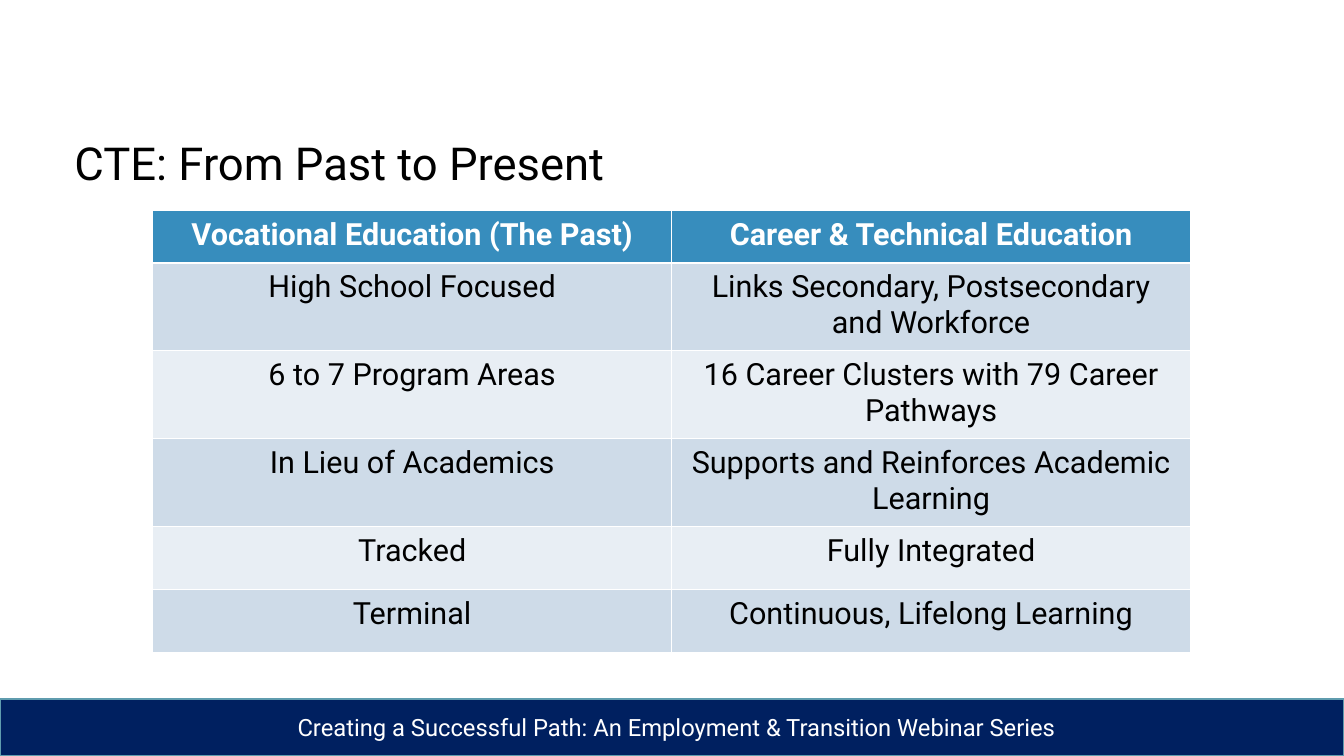
from dataclasses import dataclass

from lxml.etree import SubElement
from pptx import Presentation
from pptx.dml.color import RGBColor
from pptx.enum.shapes import MSO_SHAPE
from pptx.enum.text import MSO_ANCHOR, PP_ALIGN
from pptx.oxml.ns import qn
from pptx.util import Pt

TITLE = "CTE: From Past to Present"
FOOTER = "Creating a Successful Path: An Employment & Transition Webinar Series"
ROWS = [
    ("Vocational Education (The Past)", "Career & Technical Education"),
    ("High School Focused", "Links Secondary, Postsecondary and Workforce"),
    ("6 to 7 Program Areas", "16 Career Clusters with 79 Career Pathways"),
    ("In Lieu of Academics", "Supports and Reinforces Academic Learning"),
    ("Tracked", "Fully Integrated"),
    ("Terminal", "Continuous, Lifelong Learning"),
]

PX = 9144  # EMU per px, 100 px to the inch
SLIDE_W, SLIDE_H = 2199, 1237
BAR_BOX = (0, 1144, SLIDE_W, 92)
FOOTER_BOX = (477, 1162, 1280, 57)
TITLE_BOX = (112, 216, 1975, 99)
TABLE_LEFT, TABLE_TOP, COL_W = 250, 345, 849
ROW_HEIGHTS = (85, 144, 144, 144, 103, 103)
CELL_PAD_X, CELL_PAD_Y = 22, 11


@dataclass(frozen=True)
class Theme:
    font: str = "Roboto"
    title_size: float = 53.5
    table_size: int = 36
    footer_size: int = 28
    ink: str = "000000"
    white: str = "FFFFFF"
    navy: str = "002060"
    bar_line: str = "5F9CAE"
    header: str = "378DBD"
    bands: tuple = ("CEDBE8", "E8EEF4")


THEME = Theme()


def emu(*lengths):
    return [length * PX for length in lengths]


def write(tf, text, size, color, bold=False, align=PP_ALIGN.LEFT):
    tf.text = text
    tf.word_wrap = True
    p = tf.paragraphs[0]
    p.alignment = align
    font = p.runs[0].font
    font.name, font.size, font.bold = THEME.font, Pt(size), bold
    font.color.rgb = RGBColor.from_string(color)


def add_rect(s, box):
    sp = s.shapes.add_shape(MSO_SHAPE.RECTANGLE, *emu(*box))
    sp.shadow.inherit = False
    sp.fill.solid()
    sp.fill.fore_color.rgb = RGBColor.from_string(THEME.navy)
    return sp


def add_borders(cell, bottom, top):
    """White cell edges; bottom and top are widths in points."""
    tc_pr = cell._tc.get_or_add_tcPr()
    for side, width in (("L", 1), ("R", 1), ("T", top), ("B", bottom)):
        ln = SubElement(tc_pr, qn(f"a:ln{side}"), w=str(Pt(width)))
        fill = SubElement(ln, qn("a:solidFill"))
        SubElement(fill, qn("a:srgbClr"), val=THEME.white)


def add_footer(s):
    bar = add_rect(s, BAR_BOX)
    bar.line.color.rgb = RGBColor.from_string(THEME.bar_line)
    bar.line.width = Pt(2)
    label = add_rect(s, FOOTER_BOX)
    label.line.fill.background()
    label.text_frame.vertical_anchor = MSO_ANCHOR.TOP
    write(label.text_frame, FOOTER, THEME.footer_size, THEME.white)


def add_title(s):
    tf = s.shapes.add_textbox(*emu(*TITLE_BOX)).text_frame
    tf.vertical_anchor = MSO_ANCHOR.MIDDLE
    write(tf, TITLE, THEME.title_size, THEME.ink)


def add_comparison(s):
    n_cols = len(ROWS[0])
    box = emu(TABLE_LEFT, TABLE_TOP, COL_W * n_cols, sum(ROW_HEIGHTS))
    table = s.shapes.add_table(len(ROWS), n_cols, *box).table
    for column in table.columns:
        column.width = COL_W * PX
    for i, (texts, height) in enumerate(zip(ROWS, ROW_HEIGHTS)):
        table.rows[i].height = height * PX
        is_header = i == 0
        fill = THEME.header if is_header else THEME.bands[(i - 1) % 2]
        color = THEME.white if is_header else THEME.ink
        for j, text in enumerate(texts):
            cell = table.cell(i, j)
            cell.margin_left = cell.margin_right = CELL_PAD_X * PX
            cell.margin_top = cell.margin_bottom = CELL_PAD_Y * PX
            add_borders(cell, bottom=3 if is_header else 1, top=3 if i == 1 else 1)
            cell.fill.solid()
            cell.fill.fore_color.rgb = RGBColor.from_string(fill)
            write(cell.text_frame, text, THEME.table_size, color, is_header, PP_ALIGN.CENTER)


def main():
    prs = Presentation()
    prs.slide_width, prs.slide_height = emu(SLIDE_W, SLIDE_H)
    s = prs.slides.add_slide(prs.slide_layouts[6])
    add_footer(s)
    add_title(s)
    add_comparison(s)
    prs.save("out.pptx")


if __name__ == "__main__":
    main()
